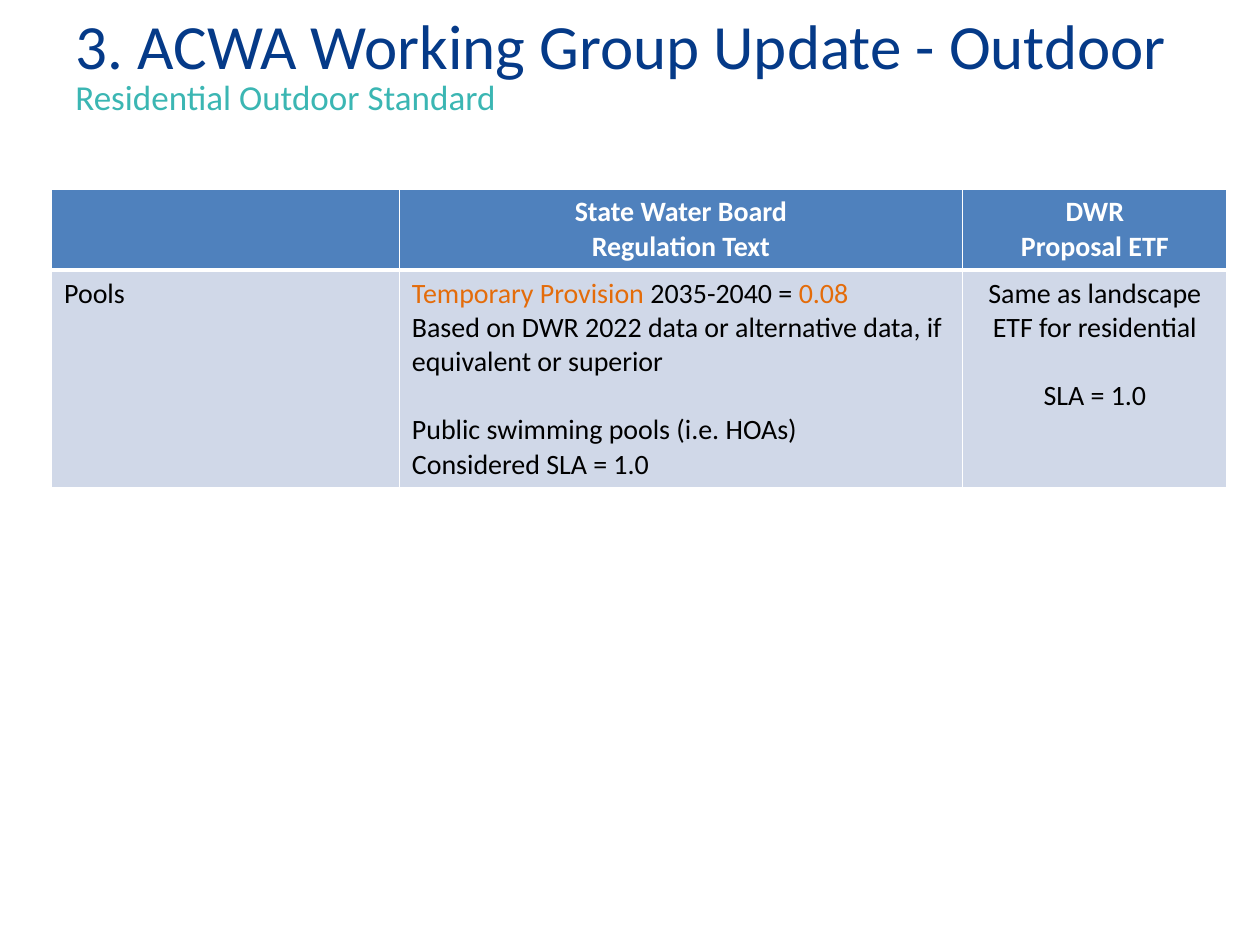
from dataclasses import dataclass

from lxml.etree import SubElement
from pptx import Presentation
from pptx.dml.color import RGBColor
from pptx.enum.text import MSO_ANCHOR, PP_ALIGN
from pptx.oxml.ns import qn
from pptx.util import Emu, Inches, Pt

NAVY = RGBColor(0x05, 0x3A, 0x88)
TEAL = RGBColor(0x3B, 0xB6, 0xB3)
BLUE = RGBColor(0x4F, 0x81, 0xBD)
PALE = RGBColor(0xD0, 0xD8, 0xE8)
ORANGE = RGBColor(0xE4, 0x6C, 0x0A)
BLACK = RGBColor(0, 0, 0)
WHITE = RGBColor(0xFF, 0xFF, 0xFF)

FONT = "Calibri"
UNIT = Inches(0.1)  # the slide is a grid of 100 columns by 75 rows
COLS = (27.6, 44.7, 21)
ROWS = (6.4, 17.3)
GAP = Pt(19.5)  # one line of table text


@dataclass
class Span:
    text: str
    color: RGBColor = BLACK
    ends: bool = False  # a line break follows


@dataclass
class Para:
    spans: list[Span]
    align: PP_ALIGN = PP_ALIGN.LEFT
    gap: int = 0


@dataclass
class Look:
    fill: RGBColor
    bold: bool
    base: float  # width of the bottom border in points


HEAD = Look(BLUE, True, 3)
BODY = Look(PALE, False, 1)


def units(*nums: float) -> list[Emu]:
    return [Emu(round(n * UNIT)) for n in nums]


def style(font, size: float, color: RGBColor, bold: bool = False) -> None:
    font.name, font.size, font.bold = FONT, Pt(size), bold
    font.color.rgb = color


def head(top: str, low: str) -> list[Para]:
    return [Para([Span(top, WHITE, True), Span(low, WHITE)], PP_ALIGN.CENTER)]


def border(cell, side: str, width: float) -> None:
    line = SubElement(cell._tc.get_or_add_tcPr(), qn(f"a:ln{side}"), w=str(Pt(width)))
    fill = SubElement(line, qn("a:solidFill"))
    SubElement(fill, qn("a:srgbClr"), val=str(WHITE))


def fill_cell(cell, paras: list[Para], look: Look) -> None:
    for side, width in zip("LRTB", (1, 1, 1, look.base)):
        border(cell, side, width)
    cell.fill.solid()
    cell.fill.fore_color.rgb = look.fill
    frame = cell.text_frame
    for i, para in enumerate(paras):
        p = frame.add_paragraph() if i else frame.paragraphs[0]
        p.alignment = para.align
        if para.gap:
            p.space_before = para.gap
        for span in para.spans:
            run = p.add_run()
            run.text = span.text
            style(run.font, 16, span.color, look.bold)
            if span.ends:
                p.add_line_break()


def add_grid(slide, cells: list[list[list[Para]]]) -> None:
    place = units(4.1, 15, sum(COLS), sum(ROWS))
    table = slide.shapes.add_table(len(ROWS), len(COLS), *place).table
    for col, width in zip(table.columns, units(*COLS)):
        col.width = width
    for row, height, line, look in zip(table.rows, units(*ROWS), cells, (HEAD, BODY)):
        row.height = height
        for cell, paras in zip(row.cells, line):
            fill_cell(cell, paras, look)


def add_title(slide, text: str) -> None:
    title = slide.shapes.title
    title.left, title.top, title.width, title.height = units(5, -3.6, 90, 10.6)
    frame = title.text_frame
    frame.text = text
    frame.vertical_anchor = MSO_ANCHOR.BOTTOM
    p = frame.paragraphs[0]
    p.alignment, p.line_spacing = PP_ALIGN.LEFT, Pt(36)
    style(p.runs[0].font, 36, NAVY)


def add_subtitle(slide, text: str) -> None:
    frame = slide.shapes.add_textbox(*units(5, 5.5, 90, 3.5)).text_frame
    frame.word_wrap = True
    frame.text = text
    style(frame.paragraphs[0].runs[0].font, 20, TEAL)


def main() -> None:
    deck = Presentation()
    deck.slide_width, deck.slide_height = units(100, 75)
    slide = deck.slides.add_slide(deck.slide_layouts[5])
    rule = [
        Para([
            Span("Temporary Provision ", ORANGE),
            Span("2035-2040 = "),
            Span("0.08", ORANGE, True),
            Span("Based on DWR 2022 data or alternative data, if equivalent or superior"),
        ]),
        Para([
            Span("Public swimming pools (i.e. HOAs)", ends=True),
            Span("Considered SLA = 1.0"),
        ], gap=GAP),
    ]
    offer = [
        Para([Span("Same as landscape ETF for residential")], PP_ALIGN.CENTER),
        Para([Span("SLA = 1.0")], PP_ALIGN.CENTER, GAP),
    ]
    add_grid(slide, [
        [[], head("State Water Board", "Regulation Text"), head("DWR", "Proposal ETF")],
        [[Para([Span("Pools")])], rule, offer],
    ])
    add_title(slide, "3. ACWA Working Group Update - Outdoor")
    add_subtitle(slide, "Residential Outdoor Standard")
    deck.save("out.pptx")


if __name__ == "__main__":
    main()
